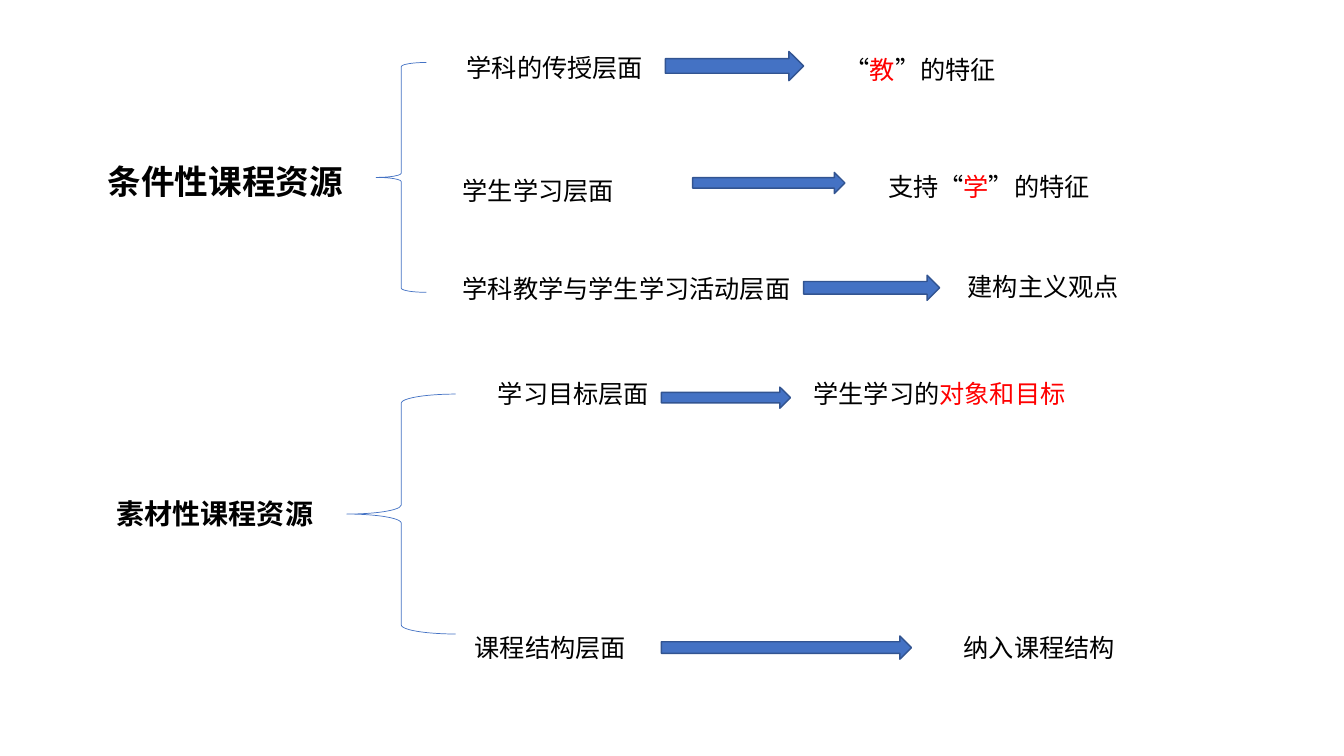
from lxml.etree import SubElement
from pptx import Presentation
from pptx.dml.color import RGBColor
from pptx.enum.lang import MSO_LANGUAGE_ID
from pptx.enum.shapes import MSO_SHAPE
from pptx.enum.text import MSO_AUTO_SIZE
from pptx.oxml.ns import qn
from pptx.util import Pt

PX = 9144  # 100 px to the inch
FONT = "Noto Sans CJK SC"
COLORS = {"text": "000000", "key": "FF0000", "blue": "4472C4", "edge": "325491"}


def add_label(left, top, width, height, runs, size=18, bold=False):
    box = slide.shapes.add_textbox(left * PX, top * PX, width * PX, height * PX)
    frame = box.text_frame
    frame.word_wrap = True
    frame.auto_size = MSO_AUTO_SIZE.SHAPE_TO_FIT_TEXT
    paragraph = frame.paragraphs[0]
    for text, color in runs:
        run = paragraph.add_run()
        run.text = text
        font = run.font
        font.size = Pt(size)
        font.bold = bold
        font.name = FONT
        font.language_id = MSO_LANGUAGE_ID.SIMPLIFIED_CHINESE
        font.color.rgb = RGBColor.from_string(COLORS[color])
        SubElement(run._r.get_or_add_rPr(), qn("a:ea"), typeface=FONT)


def add_outline(kind, left, top, width, height, line, points):
    shape = slide.shapes.add_shape(kind, left * PX, top * PX, width * PX, height * PX)
    shape.shadow.inherit = False
    shape.line.color.rgb = RGBColor.from_string(COLORS[line])
    shape.line.width = Pt(points)
    return shape


presentation = Presentation()
presentation.slide_width = 1333 * PX
presentation.slide_height = 750 * PX
slide = presentation.slides.add_slide(presentation.slide_layouts[6])

# Two kinds of course resources
add_label(97, 155, 255, 50, [("条件性课程资源", "text")], 24, True)
add_label(106, 488, 244, 44, [("素材性课程资源", "text")], 20, True)

# Braces
for box in [(373, 62, 50, 228), (344, 391, 108, 238)]:
    brace = add_outline(MSO_SHAPE.LEFT_BRACE, *box, "blue", 0.5)
    brace.fill.background()

# Levels: left, top, width, text
levels = [
    (453, 47, 195, "学科的传授层面"),
    (449, 169, 230, "学生学习层面"),
    (449, 266, 379, "学科教学与学生学习活动层面"),
    (484, 370, 195, "学习目标层面"),
    (461, 622, 248, "课程结构层面"),
]
for left, top, width, text in levels:
    add_label(left, top, width, 40, [(text, "text")])

# Arrows from each level to its feature
arrows = [
    (660, 51, 137, 29),
    (687, 171, 151, 21),
    (797, 273, 135, 25),
    (656, 384, 128, 21),
    (656, 631, 248, 23),
]
for box in arrows:
    arrow = add_outline(MSO_SHAPE.RIGHT_ARROW, *box, "edge", 1)
    arrow.fill.solid()
    arrow.fill.fore_color.rgb = RGBColor.from_string(COLORS["blue"])

# Features: left, top, width, runs
features = [
    (828, 49, 226, [("“", "text"), ("教", "key"), ("”的特征", "text")]),
    (871, 165, 248, [("支持“", "text"), ("学", "key"), ("”的特征", "text")]),
    (950, 264, 228, [("建构主义观点", "text")]),
    (797, 370, 321, [("学生学习的", "text"), ("对象和目标", "key")]),
    (946, 622, 199, [("纳入课程结构", "text")]),
]
for left, top, width, runs in features:
    add_label(left, top, width, 40, runs)

presentation.save("out.pptx")
